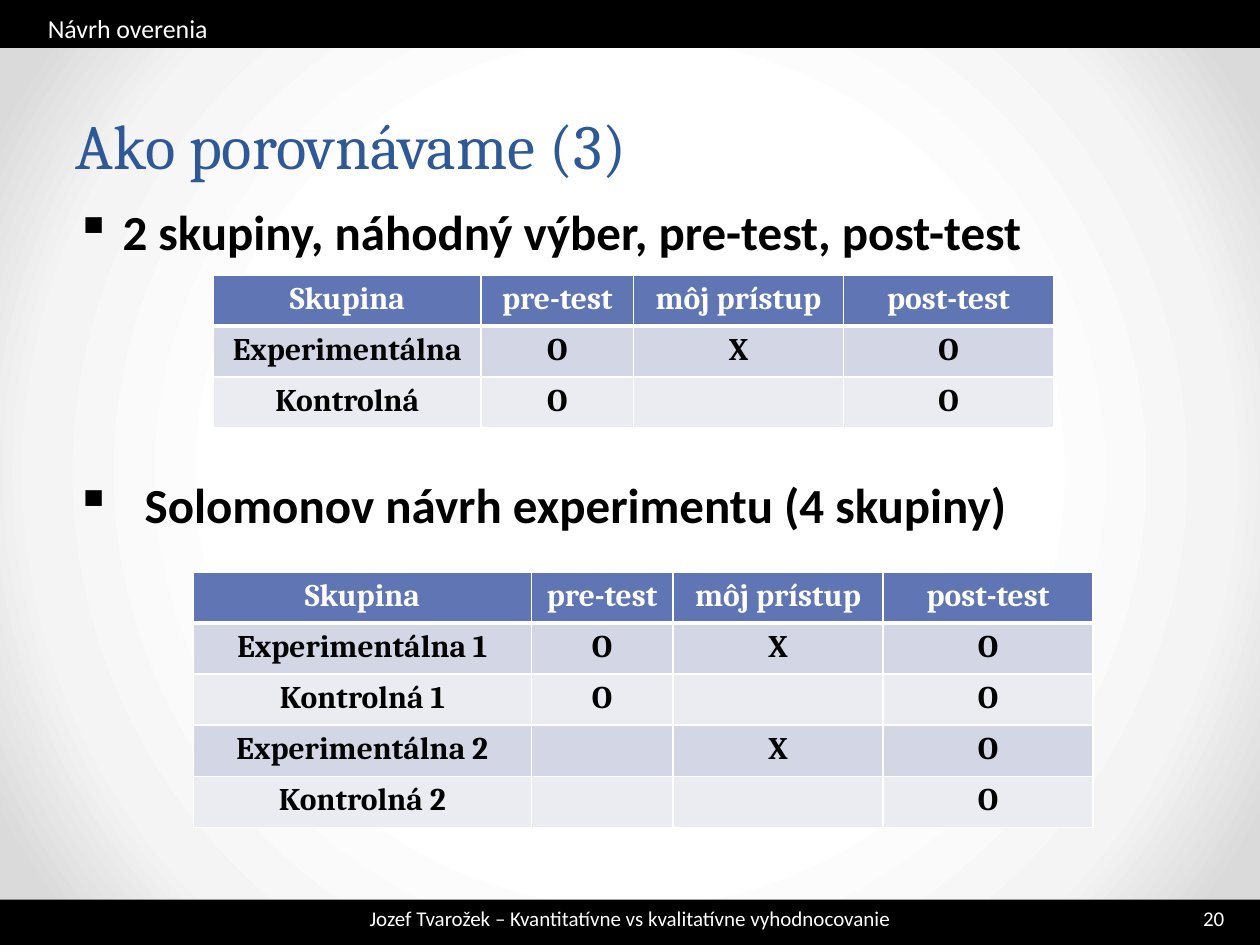
from lxml import etree
from pptx import Presentation
from pptx import util as u
from pptx.dml.color import RGBColor
from pptx.enum import shapes, text
from pptx.oxml import ns

BLACK = RGBColor(0x00, 0x00, 0x00)
WHITE = RGBColor(0xFF, 0xFF, 0xFF)
TITLE_BLUE = RGBColor(0x2F, 0x58, 0x97)
HEADER_BLUE = RGBColor(0x60, 0x76, 0xB4)
BAND_DARK = RGBColor(0xD2, 0xD6, 0xE5)
BAND_LIGHT = RGBColor(0xEA, 0xEC, 0xF2)
BACKDROP = ((50, WHITE), (76, RGBColor(0xF4, 0xF4, 0xF4)), (92, RGBColor(0xDA, 0xDA, 0xDA)))
HEADINGS = ("Skupina", "pre-test", "môj prístup", "post-test")


def add_node(parent, tag, **attributes):
    return etree.SubElement(parent, ns.qn(tag), {k: str(v) for k, v in attributes.items()})


class SlideBuilder:
    body_font = "Calibri"
    serif_font = "Cambria"
    row_height = 29.2

    def __init__(self, page):
        self.page = page

    def backdrop(self, stops):
        fill = self.page.background.fill
        fill.gradient()
        gradient = self.page.background._cSld.find(".//" + ns.qn("a:gradFill"))
        for child in list(gradient):
            gradient.remove(child)
        stop_list = add_node(gradient, "a:gsLst")
        for position, color in stops:
            stop = add_node(stop_list, "a:gs", pos=position * 1000)
            add_node(stop, "a:srgbClr", val=color)
        circle = add_node(gradient, "a:path", path="circle")
        add_node(circle, "a:fillToRect", l=50000, t=50000, r=50000, b=50000)

    def bar(self, top, height):
        shape = self.page.shapes.add_shape(
            shapes.MSO_SHAPE.RECTANGLE, 0, u.Pt(top), u.Pt(720), u.Pt(height))
        shape.shadow.inherit = False
        shape.fill.solid()
        shape.fill.fore_color.rgb = BLACK
        shape.line.fill.background()

    def style(self, para, size, color, font, bold=False):
        for span in para.runs:
            span.font.size = u.Pt(size)
            span.font.color.rgb = color
            span.font.name = font
            span.font.bold = bold

    def label(self, words, place, size, color=WHITE, font=body_font, bold=False,
              align=text.PP_ALIGN.LEFT, anchor=text.MSO_ANCHOR.TOP):
        box = self.page.shapes.add_textbox(*map(u.Pt, place))
        frame = box.text_frame
        frame.word_wrap = True
        frame.vertical_anchor = anchor
        frame.text = words
        for para in frame.paragraphs:
            para.alignment = align
            self.style(para, size, color, font, bold)
        return frame

    def bullet(self, para, indent, space_before=0):
        para.space_before = u.Pt(space_before)
        properties = para._p.get_or_add_pPr()
        properties.set("marL", str(u.Pt(indent)))
        properties.set("indent", str(-u.Pt(indent)))
        add_node(properties, "a:buChar", char="▪")

    def border(self, cell, tag, width):
        line = add_node(cell._tc.get_or_add_tcPr(), tag, w=u.Pt(width))
        add_node(add_node(line, "a:solidFill"), "a:srgbClr", val=WHITE)

    def cell(self, cell, words, row):
        header = row == 0
        widths = {"a:lnL": 1, "a:lnR": 1, "a:lnT": 3 if row == 1 else 1, "a:lnB": 3 if header else 1}
        for tag, width in widths.items():
            self.border(cell, tag, width)
        cell.fill.solid()
        cell.fill.fore_color.rgb = HEADER_BLUE if header else (BAND_LIGHT, BAND_DARK)[row % 2]
        cell.text_frame.text = words
        para = cell.text_frame.paragraphs[0]
        para.alignment = text.PP_ALIGN.CENTER
        self.style(para, 18, WHITE if header else BLACK, self.serif_font, True)

    def table(self, left, top, widths, groups):
        rows = (HEADINGS, *groups)
        table = self.page.shapes.add_table(
            len(rows), len(widths), u.Pt(left), u.Pt(top),
            u.Pt(sum(widths)), u.Pt(self.row_height * len(rows))).table
        for column, width in zip(table.columns, widths):
            column.width = u.Pt(width)
        for index, row in enumerate(rows):
            table.rows[index].height = u.Pt(self.row_height)
            for column, words in enumerate(row):
                self.cell(table.cell(index, column), words, index)


def main():
    deck = Presentation()
    deck.slide_width, deck.slide_height = u.Pt(720), u.Pt(540)
    slide = SlideBuilder(deck.slides.add_slide(deck.slide_layouts[6]))
    slide.backdrop(BACKDROP)
    slide.bar(514, 27)
    slide.bar(0, 27.4)

    slide.label("20", (680.4, 514, 39.6, 21.6), 12)
    title = slide.label("Ako porovnávame (3)", (36, 49.7, 648, 50.4), 36, TITLE_BLUE,
                        SlideBuilder.serif_font, anchor=text.MSO_ANCHOR.MIDDLE)
    title.paragraphs[0].line_spacing = u.Pt(58)
    slide.label("Návrh overenia", (20.2, 3.6, 680.4, 23.8), 14.8)
    slide.label("Jozef Tvarožek – Kvantitatívne vs kvalitatívne vyhodnocovanie",
                (178.6, 514, 362.8, 21), 12, align=text.PP_ALIGN.CENTER)

    body = slide.label("2 skupiny, náhodný výber, pre-test, post-test\n"
                       "Solomonov návrh experimentu (4 skupiny)",
                       (36, 111.6, 648, 391), 28, BLACK, bold=True)
    slide.bullet(body.paragraphs[0], 27)
    slide.bullet(body.paragraphs[1], 39.6, 122.4)

    slide.table(122, 157, (153, 87, 120, 120), (
        ("Experimentálna", "O", "X", "O"),
        ("Kontrolná", "O", "", "O")))
    slide.table(110.6, 326.8, (193, 81, 120, 120), (
        ("Experimentálna 1", "O", "X", "O"),
        ("Kontrolná 1", "O", "", "O"),
        ("Experimentálna 2", "", "X", "O"),
        ("Kontrolná 2", "", "", "O")))
    deck.save("out.pptx")


if __name__ == "__main__":
    main()
